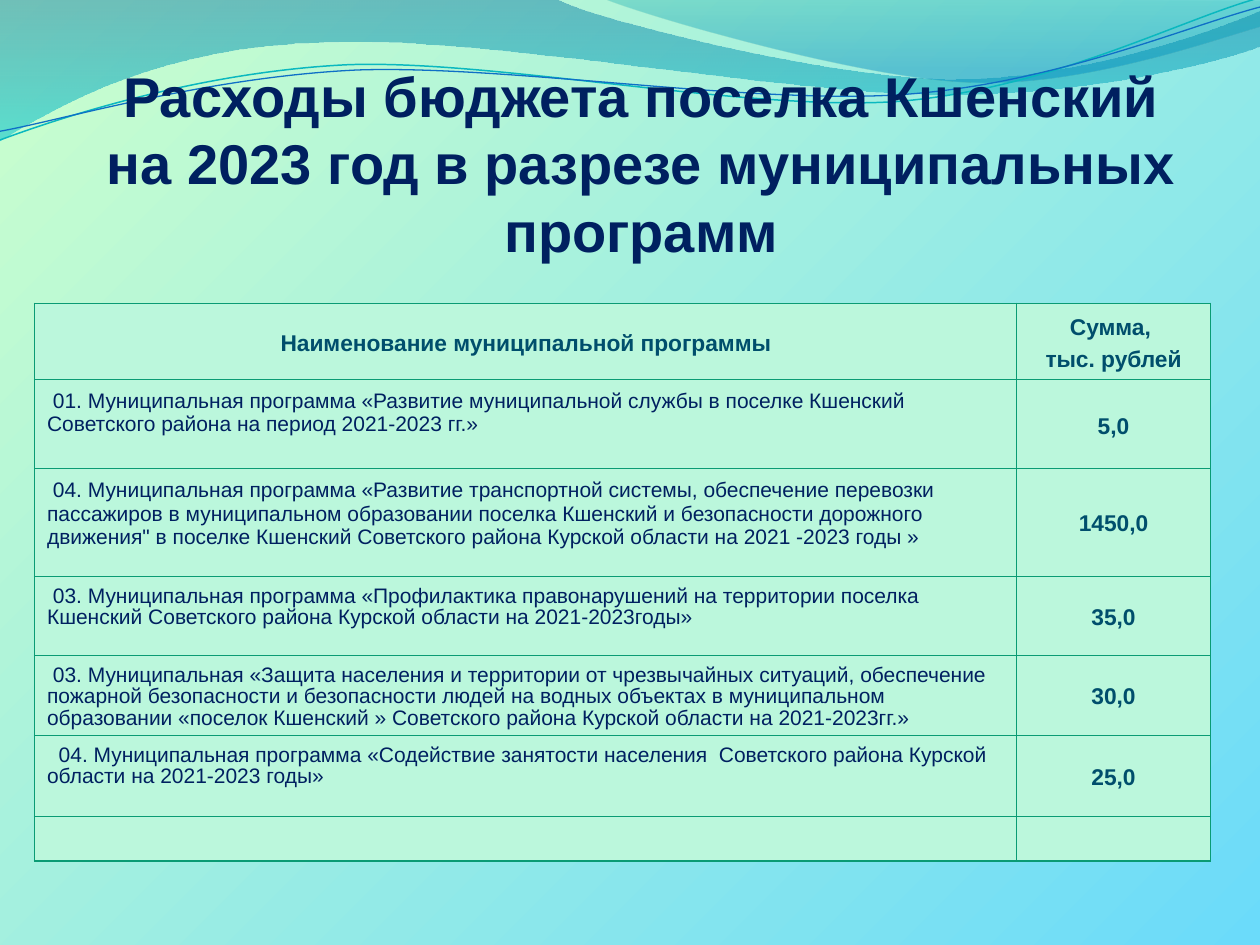
import math

import pptx
import pptx.util
import pptx.dml.color
import pptx.enum.text
import pptx.oxml.ns
from lxml import etree

Pt = pptx.util.Pt
RGB = pptx.dml.color.RGBColor
ALIGN = pptx.enum.text.PP_ALIGN
ANCHOR = pptx.enum.text.MSO_ANCHOR
qn = pptx.oxml.ns.qn

NAVY = RGB(0x00, 0x20, 0x60)
TEAL = RGB(0x00, 0x4E, 0x6C)
MINT = RGB(0xBB, 0xF7, 0xDC)
BORDER = RGB(0x0A, 0x9B, 0x74)
SKY = RGB(0x6B, 0xDB, 0xFA)
PALE_GREEN = RGB(0xCC, 0xFF, 0xCC)
FONT = "Arial"

# Content
TITLE = "Расходы бюджета поселка Кшенский на 2023 год в разрезе муниципальных программ"
HEADER = ("Наименование муниципальной программы", "Сумма, \nтыс. рублей")
# Programme, amount, row height, line spacing of programme and amount
PROGRAMMES = [
    (" 01. Муниципальная программа «Развитие муниципальной службы в поселке Кшенский "
     "Советского района на период 2021-2023 гг.»", "5,0", 50.9, 1.0, 1.0),
    (" 04. Муниципальная программа «Развитие транспортной системы, обеспечение перевозки "
     "пассажиров в муниципальном образовании поселка Кшенский и безопасности дорожного "
     "движения\" в поселке Кшенский Советского района Курской области на 2021 -2023 годы »",
     "1450,0", 61.7, 1.0, 0.9),
    (" 03. Муниципальная программа «Профилактика правонарушений на территории поселка "
     "Кшенский Советского района Курской области на 2021-2023годы»", "35,0", 45.4, 0.9, 0.9),
    (" 03. Муниципальная «Защита населения и территории от чрезвычайных ситуаций, обеспечение "
     "пожарной безопасности и безопасности людей на водных объектах в муниципальном "
     "образовании «поселок Кшенский » Советского района Курской области на 2021-2023гг.»",
     "30,0", 45.7, 0.9, 0.9),
    ("  04. Муниципальная программа «Содействие занятости населения  Советского района Курской "
     "области на 2021-2023 годы»", "25,0", 46, 0.9, 0.9),
]
HEADER_HEIGHT, EMPTY_HEIGHT = 42.3, 25.7
COLUMN_WIDTHS = (561.2, 110.8)
TABLE_LEFT, TABLE_TOP = 19.7, 173.2

# Waves: box, outline, gradient stops. A pair is a straight step, six numbers a Bezier step
WAVES = [
    ((-1, -1, 722, 82),
     [(0, 0), (317, -1), (343, 12, 478, 45, 546, 45), (614, 45, 690, 19, 720, 6), (721, 26),
      (708, 32, 626, 55, 537, 54), (448, 54, 275, 20, 185, 24), (93, 26, 33, 60, -1, 81), (0, 0)],
     [(0, RGB(0x00, 0x74, 0xA1), 45), (1, RGB(0x00, 0xC6, 0xCF), 55)]),
    ((345, -1, 375, 50.5),
     [(345, -1), (366, 8, 491, 45, 554, 47), (617, 50, 692, 23, 720, 15), (720, 0), (345, -1)],
     [(0, RGB(0x00, 0xA1, 0xA9), 30), (0.8, RGB(0x00, 0x8B, 0xBF), 45)]),
]
CURVE_ROTATION = 357.3
# Curves: box before rotation, outline as seen, colour, width
CURVES = [
    ((-1.4, 15.8, 721.4, 51.1),
     [(0, 80), (35, 67, 114, 41, 199, 37), (284, 34, 427, 64, 513, 58),
      (600, 51, 675, 11, 719, -1)], RGB(0x0A, 0xB8, 0xBF), 0.85),
    ((-1.4, 21.6, 722.2, 41.8),
     [(0, 75), (34, 69, 118, 44, 204, 40), (290, 37, 430, 60, 516, 54),
      (602, 48, 678, 15, 720, 4)], RGB(0x0F, 0x6F, 0xC6), 0.75),
]


def add_outline(page, bounds, steps, close, rotation=0):
    """Add a freeform in the given box and bend its segments into Bezier steps."""
    left, top, width, height = bounds
    center_x, center_y = left + width / 2, top + height / 2
    angle = math.radians(-rotation)

    def local_points(step):
        for x, y in zip(step[::2], step[1::2]):
            dx, dy = x - center_x, y - center_y
            yield (Pt(dx * math.cos(angle) - dy * math.sin(angle) + width / 2),
                   Pt(dx * math.sin(angle) + dy * math.cos(angle) + height / 2))

    ends = [list(local_points(step))[-1] for step in steps]
    builder = page.shapes.build_freeform(*ends[0], scale=1.0)
    builder.add_line_segments(ends[1:], close=close)
    shape = builder.convert_to_shape()
    shape.shadow.inherit = False
    shape.left, shape.top, shape.width, shape.height = (Pt(value) for value in bounds)
    shape.rotation = rotation

    outline = shape._element.find(".//" + qn("a:pathLst"))[0]
    outline.set("w", str(Pt(width)))
    outline.set("h", str(Pt(height)))
    for segment, step in zip(list(outline), steps):
        if len(step) == 6:
            segment.tag_name = None
            curve = etree.Element(qn("a:cubicBezTo"))
            outline.replace(segment, curve)
            segment = curve
        for point in list(segment):
            segment.remove(point)
        for x, y in local_points(step):
            etree.SubElement(segment, qn("a:pt"), {"x": str(x), "y": str(y)})
    return shape


def set_stops(fill, stops):
    fill.gradient()
    for stop, (position, color, opacity) in zip(fill.gradient_stops, stops):
        stop.position = position
        stop.color.rgb = color
        if opacity < 100:
            value = stop.color._xFill.find(qn("a:srgbClr"))
            etree.SubElement(value, qn("a:alpha")).set("val", str(opacity * 1000))


def paint_background(page):
    set_stops(page.background.fill, [(0, SKY, 100), (1, PALE_GREEN, 100)])
    gradient = page._element.find(".//" + qn("a:gradFill"))
    radial = etree.Element(qn("a:path"), {"path": "circle"})
    etree.SubElement(radial, qn("a:fillToRect"), {"l": "100000", "t": "100000"})
    gradient.replace(gradient.find(qn("a:lin")), radial)


def style_text(frame, size, color, bold, align, spacing=1.0, before=0):
    for para in frame.paragraphs:
        para.alignment = align
        para.line_spacing = spacing
        para.space_before = Pt(before)
        for span in para.runs:
            span.font.name = FONT
            span.font.size = Pt(size)
            span.font.bold = bold
            span.font.color.rgb = color


def style_cell(cell):
    cell.margin_left = cell.margin_right = Pt(7.2)
    cell.margin_top, cell.margin_bottom = Pt(5.8), Pt(3)
    cell.vertical_anchor = ANCHOR.MIDDLE
    properties = cell._tc.get_or_add_tcPr()
    for side in ("a:lnL", "a:lnR", "a:lnT", "a:lnB"):
        line = etree.SubElement(properties, qn(side), {"w": str(Pt(0.75))})
        fill = etree.SubElement(line, qn("a:solidFill"))
        etree.SubElement(fill, qn("a:srgbClr"), {"val": str(BORDER)})
    cell.fill.solid()
    cell.fill.fore_color.rgb = MINT


def add_programme_table(page):
    heights = [HEADER_HEIGHT, *(row[2] for row in PROGRAMMES), EMPTY_HEIGHT]
    table = page.shapes.add_table(len(heights), 2, Pt(TABLE_LEFT), Pt(TABLE_TOP),
                                  Pt(sum(COLUMN_WIDTHS)), Pt(sum(heights))).table
    table.first_row = table.horz_banding = False
    for column, width in zip(table.columns, COLUMN_WIDTHS):
        column.width = Pt(width)
    for row, height in zip(table.rows, heights):
        row.height = Pt(height)
        for cell in row.cells:
            style_cell(cell)
    for column, text in enumerate(HEADER):
        frame = table.cell(0, column).text_frame
        frame.text = text
        style_text(frame, 13, TEAL, True, ALIGN.CENTER, before=3.5)
    for index, (name, amount, _, name_spacing, amount_spacing) in enumerate(PROGRAMMES, 1):
        name_cell, amount_cell = table.cell(index, 0), table.cell(index, 1)
        name_cell.text_frame.text = name
        name_cell.vertical_anchor = ANCHOR.TOP
        name_cell.margin_bottom = Pt(0.5)
        style_text(name_cell.text_frame, 12, NAVY, False, ALIGN.LEFT, name_spacing)
        amount_cell.text_frame.text = amount
        style_text(amount_cell.text_frame, 13, TEAL, True, ALIGN.CENTER, amount_spacing)
    for cell in table.rows[len(heights) - 1].cells:
        cell.margin_top = cell.margin_bottom = 0


def main():
    deck = pptx.Presentation()
    deck.slide_width, deck.slide_height = Pt(720), Pt(540)
    page = deck.slides.add_slide(deck.slide_layouts[6])
    paint_background(page)

    # Waves along the top
    for bounds, steps, stops in WAVES:
        wave = add_outline(page, bounds, steps, True)
        set_stops(wave.fill, stops)
        wave.fill.gradient_angle = 270
        wave.line.fill.background()
    for bounds, steps, color, width in CURVES:
        curve = add_outline(page, bounds, steps, False, CURVE_ROTATION)
        curve.fill.background()
        curve.line.color.rgb = color
        curve.line.width = Pt(width)

    # Title
    box = page.shapes.add_textbox(Pt(42.5), Pt(31.7), Pt(648), Pt(118.8))
    frame = box.text_frame
    frame.word_wrap = True
    frame.vertical_anchor = ANCHOR.BOTTOM
    frame.margin_left = frame.margin_right = Pt(14)
    frame.margin_top = frame.margin_bottom = 0
    frame.text = TITLE
    style_text(frame, 32, NAVY, True, ALIGN.CENTER)

    add_programme_table(page)
    deck.save("out.pptx")


if __name__ == "__main__":
    main()
